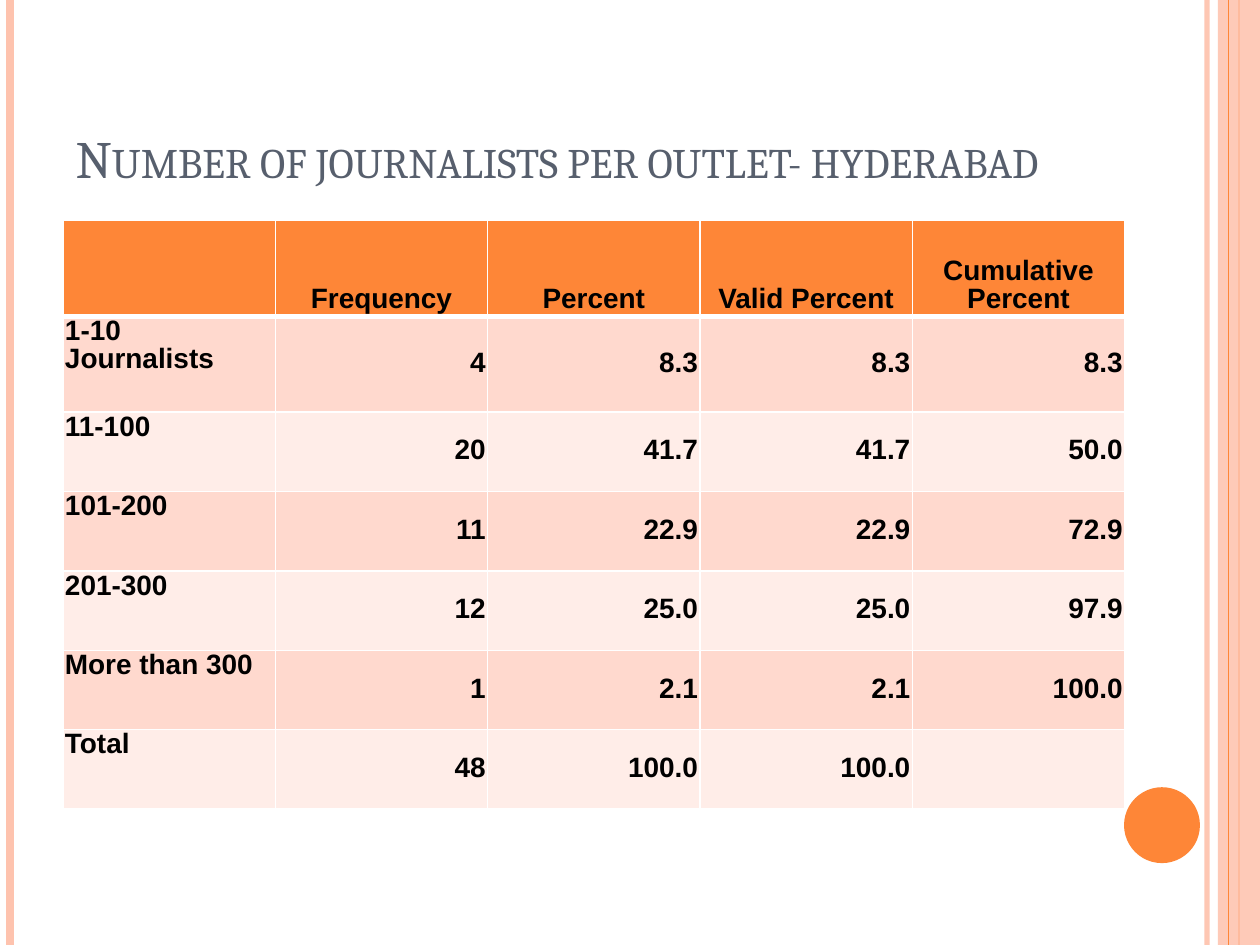
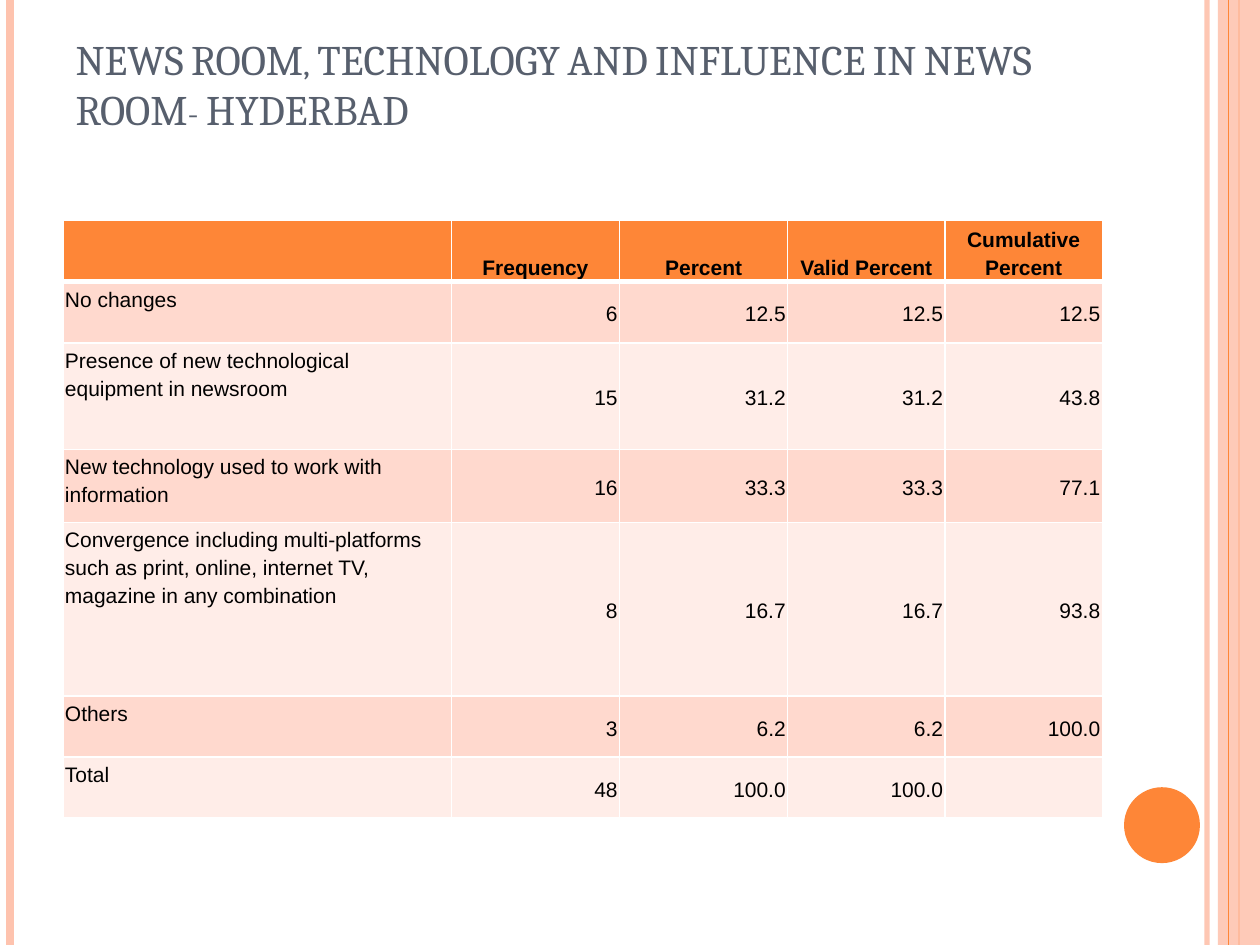
from dataclasses import dataclass

from lxml.etree import SubElement
from pptx import Presentation
from pptx.dml.color import RGBColor
from pptx.enum.shapes import MSO_CONNECTOR, MSO_SHAPE
from pptx.enum.text import MSO_ANCHOR, MSO_AUTO_SIZE, PP_ALIGN
from pptx.oxml.ns import qn
from pptx.util import Cm, Pt


@dataclass(frozen=True)
class Theme:
    orange: str = "FE8637"
    peach: str = "FEC3AE"
    slate: str = "575F6D"
    white: str = "FFFFFF"
    black: str = "000000"
    bands: tuple = ("FFD9CE", "FFEDE8")
    title_font: str = "Cambria"
    table_font: str = "Arial"
    title_size: int = 30
    long_title_size: int = 24
    large_table_size: int = 16
    small_table_size: int = 12
    table_leading: int = 16
    border: int = 1
    header_rule: int = 3


THEME = Theme()
SLIDE_BOX = (0, 0, 25.4, 19.05)
TITLE_BOX = (1.27, 0.76, 20.75, 3.18)
TABLE_CORNER = (1.27, 4.45)
HEADINGS = ("", "Frequency", "Percent", "Valid Percent", "Cumulative Percent")

JOURNALIST_ROWS = (
    ("1-10 Journalists", "4", "8.3", "8.3", "8.3"),
    ("11-100", "20", "41.7", "41.7", "50.0"),
    ("101-200", "11", "22.9", "22.9", "72.9"),
    ("201-300", "12", "25.0", "25.0", "97.9"),
    ("More than 300", "1", "2.1", "2.1", "100.0"),
    ("Total", "48", "100.0", "100.0", ""),
)
TECHNOLOGY_ROWS = (
    ("No changes", "6", "12.5", "12.5", "12.5"),
    ("Presence of new technological equipment in newsroom",
     "15", "31.2", "31.2", "43.8"),
    ("New technology used to work with information",
     "16", "33.3", "33.3", "77.1"),
    ("Convergence including multi-platforms such as print, online, "
     "internet TV, magazine in any combination",
     "8", "16.7", "16.7", "93.8"),
    ("Others", "3", "6.2", "6.2", "100.0"),
    ("Total", "48", "100.0", "100.0", ""),
)


def rgb(color):
    return RGBColor.from_string(color)


def set_opacity(shape, percent):
    for color in shape._element.spPr.iter(qn("a:srgbClr")):
        SubElement(color, qn("a:alpha"), val=str(percent * 1000))


def add_stripe(slide, box, offset, color, weight, opacity=100):
    """Draw a full-height vertical line at an offset from the box's left."""
    left, top, _, height = box
    x = Cm(left + offset)
    stripe = slide.shapes.add_connector(
        MSO_CONNECTOR.STRAIGHT, x, Cm(top), x, Cm(top + height))
    stripe.line.color.rgb = rgb(color)
    stripe.line.width = Pt(weight)
    SubElement(stripe._element.spPr, qn("a:effectLst"))
    if opacity < 100:
        set_opacity(stripe, opacity)


def add_plain_shape(slide, preset, box, color):
    shape = slide.shapes.add_shape(preset, *map(Cm, box))
    shape.shadow.inherit = False
    shape.fill.solid()
    shape.fill.fore_color.rgb = rgb(color)
    shape.line.fill.background()
    return shape


def add_frame(slide, box):
    """Add the edge stripes, right band and disc that every slide shares."""
    left, top, width, height = box
    right = left + width
    add_stripe(slide, box, 24.33, THEME.peach, 3, opacity=93)
    add_stripe(slide, box, 0.21, THEME.peach, 4.5)
    add_stripe(slide, box, 24.98, THEME.orange, 1.5)
    band = add_plain_shape(slide, MSO_SHAPE.RECTANGLE,
                           (right - 0.85, top, 0.85, height), THEME.peach)
    set_opacity(band, 87)
    add_stripe(slide, box, 24.77, THEME.orange, 0.75)
    add_plain_shape(slide, MSO_SHAPE.OVAL,
                    (right - 2.74, top + 15.87, 1.53, 1.53), THEME.orange)


def set_title(slide, box, wording, size, bottom_inset):
    title = slide.shapes.title
    title.left, title.top, title.width, title.height = map(Cm, box)
    frame = title.text_frame
    frame.auto_size = MSO_AUTO_SIZE.NONE
    frame.word_wrap = True
    frame.vertical_anchor = MSO_ANCHOR.BOTTOM
    frame.margin_top = 0
    frame.margin_bottom = Cm(bottom_inset)
    paragraph = frame.paragraphs[0]
    paragraph.alignment = PP_ALIGN.LEFT
    run = paragraph.add_run()
    run.text = wording
    run.font.name = THEME.title_font
    run.font.size = Pt(size)
    run.font.color.rgb = rgb(THEME.slate)
    run.font._element.set("cap", "small")


def set_borders(cell, top, bottom):
    properties = cell._tc.get_or_add_tcPr()
    weights = {"L": THEME.border, "R": THEME.border, "T": top, "B": bottom}
    for side, weight in weights.items():
        border = SubElement(properties, qn(f"a:ln{side}"), w=str(Pt(weight)))
        fill = SubElement(border, qn("a:solidFill"))
        SubElement(fill, qn("a:srgbClr"), val=THEME.white)


def write_cell(cell, wording, size, bold, alignment, anchor):
    cell.margin_left = cell.margin_right = Cm(0.04)
    cell.margin_top = cell.margin_bottom = Cm(0.04)
    cell.vertical_anchor = anchor
    paragraph = cell.text_frame.paragraphs[0]
    paragraph.alignment = alignment
    paragraph.line_spacing = Pt(THEME.table_leading)
    run = paragraph.add_run()
    run.text = wording
    run.font.name = THEME.table_font
    run.font.size = Pt(size)
    run.font.bold = bold
    run.font.color.rgb = rgb(THEME.black)


def add_frequency_table(slide, corner, rows, widths, heights, size, bold_body):
    box = (*corner, sum(widths), sum(heights))
    table = slide.shapes.add_table(
        len(heights), len(widths), *map(Cm, box)).table
    table.horz_banding = False
    for column, width in zip(table.columns, widths):
        column.width = Cm(width)
    for row, height in zip(table.rows, heights):
        row.height = Cm(height)

    for r, values in enumerate((HEADINGS, *rows)):
        header = r == 0
        for c, value in enumerate(values):
            cell = table.cell(r, c)
            set_borders(cell,
                        THEME.header_rule if r == 1 else THEME.border,
                        THEME.header_rule if header else THEME.border)
            cell.fill.solid()
            cell.fill.fore_color.rgb = rgb(
                THEME.orange if header else THEME.bands[(r - 1) % 2])
            if header:
                placement = (PP_ALIGN.CENTER, MSO_ANCHOR.BOTTOM)
            elif c == 0:
                placement = (PP_ALIGN.LEFT, MSO_ANCHOR.TOP)
            else:
                placement = (PP_ALIGN.RIGHT, MSO_ANCHOR.MIDDLE)
            if value:
                write_cell(cell, value, size, header or bold_body, *placement)


def add_table_slide(deck, title, title_size, rows, widths, heights,
                    table_size, bold_body, title_inset=0.13):
    slide = deck.slides.add_slide(deck.slide_layouts[5])
    add_frame(slide, SLIDE_BOX)
    set_title(slide, TITLE_BOX, title, title_size, title_inset)
    add_frequency_table(slide, TABLE_CORNER, rows, widths, heights,
                        table_size, bold_body)


def main():
    deck = Presentation()
    deck.slide_width, deck.slide_height = map(Cm, SLIDE_BOX[2:])
    add_table_slide(
        deck, "Number of journalists per outlet- hyderabad",
        THEME.title_size, JOURNALIST_ROWS,
        widths=[4.28] * 5, heights=[1.93] * 2 + [1.6] * 5,
        table_size=THEME.large_table_size, bold_body=True)
    add_table_slide(
        deck, "NEWS ROOM, TECHNOLOGY AND INFLUENCE IN NEWS ROOM- HYDERBAD",
        THEME.long_title_size, TECHNOLOGY_ROWS,
        widths=[7.83, 3.39, 3.39, 3.17, 3.17],
        heights=[1.23, 1.23, 2.15, 1.47, 3.5, 1.23, 1.23],
        table_size=THEME.small_table_size, bold_body=False,
        title_inset=1.24)
    deck.save("out.pptx")


if __name__ == "__main__":
    main()
